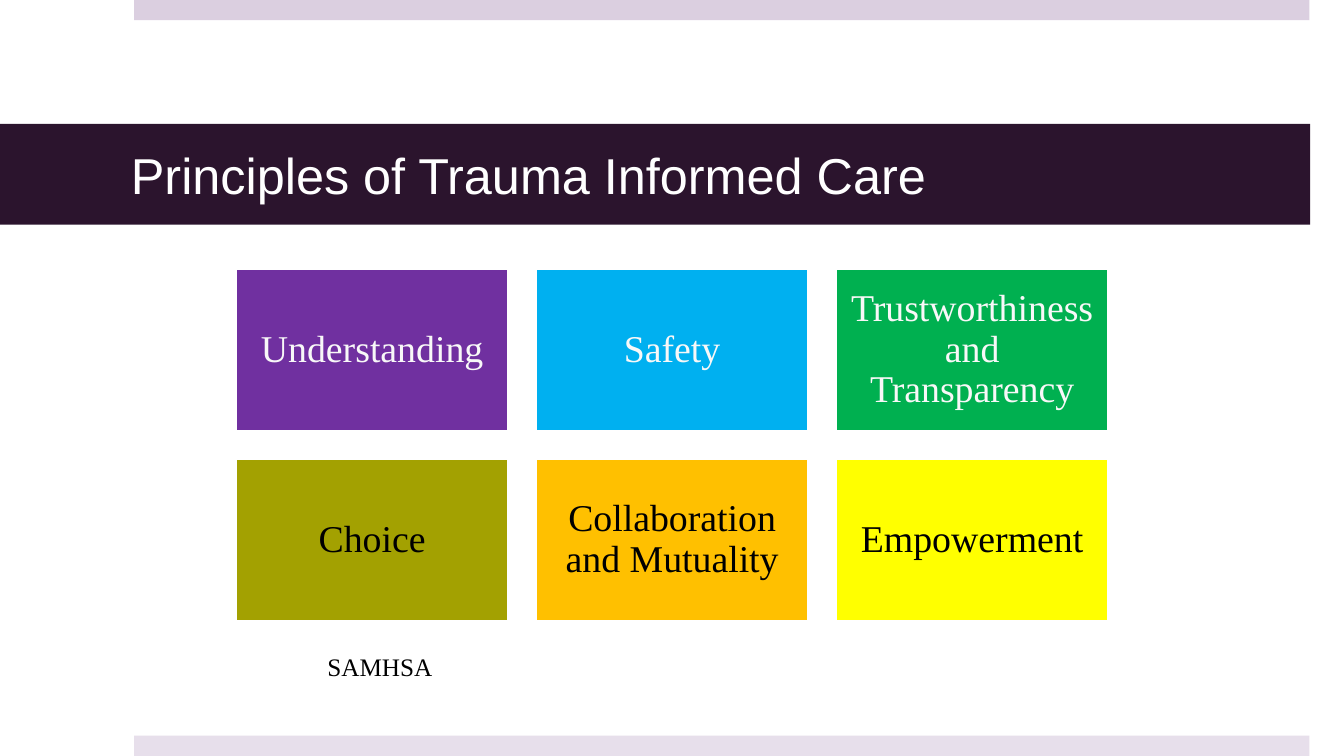
from dataclasses import dataclass

from pptx import Presentation
from pptx.dml.color import RGBColor as Rgb
from pptx.enum.shapes import MSO_SHAPE as Shape
from pptx.enum.text import MSO_ANCHOR as Anchor, PP_ALIGN as Align
from pptx.util import Cm, Pt


@dataclass(frozen=True)
class Theme:
    head: str = "Arial"
    body: str = "Times New Roman"
    big: int = 36
    mid: int = 27
    small: int = 18
    edge: int = 2
    dark: str = "2B142D"
    top: str = "DBCFE0"
    foot: str = "E7DFEB"
    white: str = "FFFFFF"
    pale: str = "F8F8F8"
    black: str = "000000"
    violet: str = "7030A0"
    blue: str = "00B0F0"
    green: str = "00B050"
    olive: str = "A3A101"
    amber: str = "FFC000"
    yellow: str = "FFFF00"


class Deck:
    def __init__(self, theme):
        self.theme = theme
        self.file = Presentation()
        self.file.slide_width, self.file.slide_height = Cm(33.87), Cm(19.05)
        self.slide = self.file.slides.add_slide(self.file.slide_layouts[6])

    def block(self, left, top, width, height, fill, line=None):
        box = self.slide.shapes.add_shape(
            Shape.RECTANGLE, Cm(left), Cm(top), Cm(width), Cm(height))
        box.shadow.inherit = False
        box.fill.solid()
        box.fill.fore_color.rgb = Rgb.from_string(fill)
        if line:
            box.line.color.rgb = Rgb.from_string(line)
            box.line.width = Pt(self.theme.edge)
        else:
            box.line.fill.background()
        return box

    def label(self, box, text, font, size, color, align=Align.LEFT,
              pads=(0.25, 0.13, 0.25, 0.13), anchor=Anchor.MIDDLE):
        frame = box.text_frame
        frame.word_wrap = True
        frame.vertical_anchor = anchor
        (frame.margin_left, frame.margin_top,
         frame.margin_right, frame.margin_bottom) = map(Cm, pads)
        para = frame.paragraphs[0]
        para.text = text
        para.alignment = align
        para.font.name = font
        para.font.size = Pt(size)
        para.font.color.rgb = Rgb.from_string(color)
        return para

    def title(self, text):
        look = self.theme
        band = self.block(0, 3.12, 33.02, 2.54, look.dark)
        self.label(band, text, look.head, look.big, look.white,
                   pads=(3.3, 0.13, 0.76, 0.13))

    def card(self, left, top, text, fill, color):
        look = self.theme
        box = self.block(left, top, 6.88, 4.11, fill, look.white)
        para = self.label(box, text, look.body, look.mid, color,
                          Align.CENTER, (0.28,) * 4)
        para.line_spacing = 0.9

    def note(self, left, top, width, height, text):
        look = self.theme
        box = self.slide.shapes.add_textbox(
            Cm(left), Cm(top), Cm(width), Cm(height))
        self.label(box, text, look.body, look.small, look.black,
                   anchor=Anchor.TOP)


def main():
    look = Theme()
    deck = Deck(look)
    for top, fill in ((0, look.top), (18.54, look.foot)):
        deck.block(3.38, top, 29.62, 0.51, fill)
    deck.title("Principles of Trauma Informed Care")
    cards = (
        ("Understanding", look.violet, look.pale),
        ("Safety", look.blue, look.pale),
        ("Trustworthiness and Transparency", look.green, look.pale),
        ("Choice", look.olive, look.black),
        ("Collaboration and Mutuality", look.amber, look.black),
        ("Empowerment", look.yellow, look.black),
    )
    for index, (text, fill, color) in enumerate(cards):
        row, col = divmod(index, 3)
        deck.card(5.94 + 7.56 * col, 6.76 + 4.79 * row, text, fill, color)
    deck.note(8, 16.28, 19.94, 1.02, "SAMHSA")
    deck.file.save("out.pptx")


if __name__ == "__main__":
    main()
